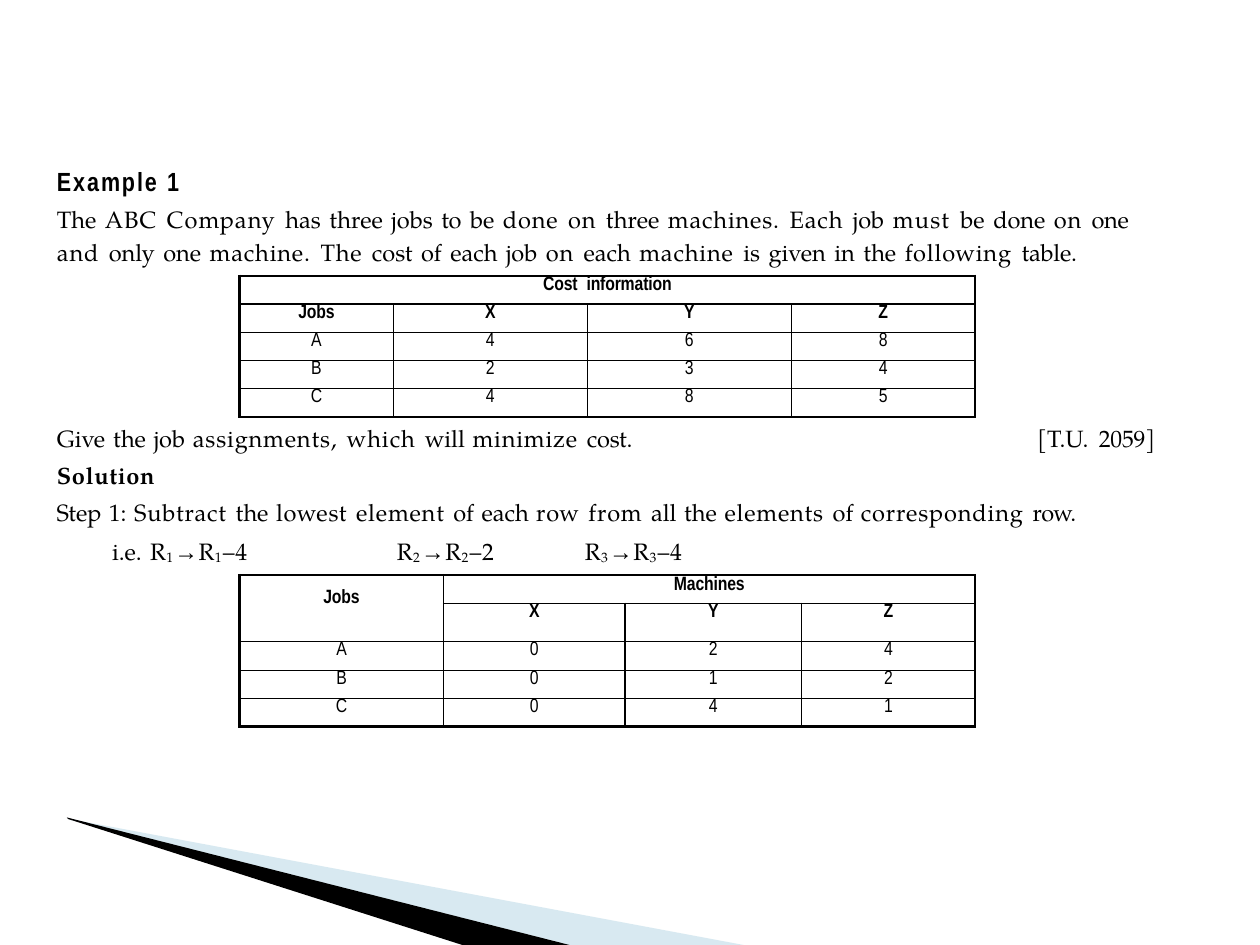
from itertools import groupby

from lxml import etree
from pptx import Presentation
from pptx import util as u
from pptx.dml.color import RGBColor
from pptx.enum import text
from pptx.oxml.ns import qn

BLACK, PALE_BLUE = "000000", "9FCADC"
SERIF, NARROW, ARROW = "TeX Gyre Pagella", "Arial Narrow", "Arial"
BODY = {"name": SERIF, "size": u.Pt(13.5), "bold": False}
TITLE = {"name": NARROW, "size": u.Pt(15), "bold": True}
CELL = {"name": NARROW, "size": u.Pt(11)}


def color(hex_string):
    return RGBColor.from_string(hex_string)


def set_all(target, values):
    for name, value in values.items():
        setattr(target, name, value)


def add_run(paragraph, content, spacing=0, style=BODY, baseline=0, gap=0):
    """Spacing is in points; gap widens the spaces between words further."""
    for is_space, letters in groupby(content, lambda letter: bool(gap) and letter == " "):
        run = paragraph.add_run()
        run.text = "".join(letters)
        set_all(run.font, style)
        run.font.color.rgb = color(BLACK)
        properties = run.font._element
        properties.set("spc", str(round((spacing + gap * is_space) * 100)))
        if baseline:
            properties.set("baseline", str(baseline * 1000))


def add_text(slide, box, top_inset, paragraphs):
    """Each paragraph is a dict: runs, and optionally gap, indent, tabs (cm) and layout."""
    shape = slide.shapes.add_textbox(*map(u.Cm, box))
    frame = shape.text_frame
    set_all(frame, {
        "word_wrap": True, "auto_size": text.MSO_AUTO_SIZE.SHAPE_TO_FIT_TEXT,
        "margin_left": 0, "margin_right": 0, "margin_bottom": 0,
        "margin_top": u.Cm(top_inset)})
    for index, item in enumerate(paragraphs):
        paragraph = frame.add_paragraph() if index else frame.paragraphs[0]
        properties = paragraph._p.get_or_add_pPr()
        properties.set("marL", str(u.Cm(item.get("indent", 0.03))))
        if "tabs" in item:
            tab_list = etree.SubElement(properties, qn("a:tabLst"))
            for position in item["tabs"]:
                etree.SubElement(tab_list, qn("a:tab"), pos=str(u.Cm(position)), algn="l")
        set_all(paragraph, item.get("layout", {}))
        for run in item["runs"]:
            add_run(paragraph, *run, gap=item.get("gap", 0))


def row_reduction_runs(row, amount, ending=""):
    style = {**BODY, "name": ARROW}
    variable = [("R", 0.4), (str(row), 0.6, BODY, -9)]
    return variable + [("→", 0.4, style)] + variable + [(f"–{amount}{ending}", 0.4)]


def set_border(cell, side, width):
    line = etree.SubElement(cell._tc.get_or_add_tcPr(), qn(f"a:ln{side}"), w=str(u.Pt(width)))
    fill = etree.SubElement(line, qn("a:solidFill"))
    etree.SubElement(fill, qn("a:srgbClr"), val=BLACK)


def add_cost_table(slide, left, top, widths, heights, rows, merges, header_rows=2):
    """Rows hold the cell texts; merges are (row, column, last row, last column)."""
    frame = slide.shapes.add_table(len(rows), len(widths), u.Cm(left), u.Cm(top),
                                   u.Cm(sum(widths)), u.Cm(sum(heights)))
    table = frame.table
    set_all(table, {"first_row": False, "horz_banding": False})
    for column, width in zip(table.columns, widths):
        column.width = u.Cm(width)
    for row, height in zip(table.rows, heights):
        row.height = u.Cm(height)
    for first_row, first_column, last_row, last_column in merges:
        table.cell(first_row, first_column).merge(table.cell(last_row, last_column))

    for r, values in enumerate(rows):
        for c, value in enumerate(values):
            cell = table.cell(r, c)
            set_all(cell, {"margin_left": 0, "margin_right": 0, "margin_bottom": 0,
                           "margin_top": u.Cm(0 if r else 0.02)})
            paragraph = cell.text_frame.paragraphs[0]
            if cell.is_spanned:
                end = etree.SubElement(paragraph._p, qn("a:endParaRPr"))
                end.set("sz", "1100")
                continue
            if cell.is_merge_origin and cell.span_height > 1:
                cell.margin_top = u.Cm(0.3)
            paragraph.alignment = text.PP_ALIGN.CENTER
            heading = r < header_rows
            add_run(paragraph, value, -0.1 if heading else 0, {**CELL, "bold": heading},
                    gap=2.6)
            height = cell.span_height if cell.is_merge_origin else 1
            width = cell.span_width if cell.is_merge_origin else 1
            outer = {"L": c == 0, "R": c + width == len(widths),
                     "T": r == 0, "B": r + height == len(rows)}
            for side, is_outer in outer.items():
                set_border(cell, side, 1.5 if is_outer else 0.75)
            cell.fill.background()


def add_wedge(slide, left, top, points, hex_string, opacity=100):
    """Points are relative to left and top, in cm."""
    corners = [(u.Cm(left + x), u.Cm(top + y)) for x, y in points]
    builder = slide.shapes.build_freeform(*corners[0])
    builder.add_line_segments(corners[1:], close=True)
    shape = builder.convert_to_shape()
    shape.shadow.inherit = False
    shape.fill.solid()
    shape.fill.fore_color.rgb = color(hex_string)
    shape.line.fill.background()
    if opacity < 100:
        fill = shape._element.spPr.find(qn("a:solidFill"))
        etree.SubElement(fill[0], qn("a:alpha"), val=str(opacity * 1000))


def add_corner_decoration(slide, left, top):
    add_wedge(slide, left, top,
              [(0.05, 0.03), (0.05, 0.05), (0.28, 0.08), (10.13, 2.57), (13.64, 2.57)],
              PALE_BLUE, 40)
    add_wedge(slide, left, top, [(0, 0), (0.02, 0.03), (7.97, 2.57), (10.13, 2.57)], BLACK)


def add_problem(slide):
    add_text(slide, (1.12, 3.12, 22.3, 2.29), 0.21, [
        {"runs": [("Example ", 1.1, TITLE), ("1", 0, TITLE)]},
        {"gap": 1.5, "layout": {"line_spacing": 1.15, "space_before": u.Pt(2.4)}, "runs": [
            ("The ",), ("ABC Company ", 0.6), ("has three jobs to be ",), ("done on ", 0.5),
            ("three ",), ("machines. Each ", 0.5), ("job ",), ("must ", 0.8), ("be done ",),
            ("on ", 0.5), ("one ", -0.2), ("and ", 0.5), ("only one ",),
            ("machine. The ", 0.5), ("cost of each job ",), ("on ", 0.5), ("each ",),
            ("machine ", 0.5), ("is given in the ",), ("following ", 0.5),
            ("table.", -0.1)]}])
    add_cost_table(slide, 4.83, 5.56, [3.1, 3.91, 4.11, 3.71], [0.57] * 5,
                   [["Cost information", "", "", ""], ["Jobs", *"XYZ"],
                    "A468", "B234", "C485"], [(0, 0, 0, 3)])


def add_solution(slide):
    add_text(slide, (1.12, 8.33, 11.89, 1.57), 0.22, [
        {"gap": 1.05, "runs": [
            ("Give the job ",), ("assignments, ", 0.5), ("which ", 0.6), ("will ",),
            ("minimize ", 0.5), ("cost.", -0.1)]},
        {"layout": {"space_before": u.Pt(5)},
         "runs": [("Solution", 0.4, {**BODY, "bold": True})]}])
    add_text(slide, (20.88, 8.51, 2.54, 0.66), 0.03,
             [{"gap": 2.6, "runs": [("[T.U. ",), ("2059]", -0.1)]}])
    add_text(slide, (1.04, 9.8, 21.11, 1.65), 0.24, [
        {"indent": 0.1, "gap": 0.9, "runs": [
            ("Step 1: ",), ("Subtract ", 0.5), ("the ",), ("lowest element ", 0.5),
            ("of each ",), ("row from ", 0.5), ("all the ",), ("elements ", 0.5),
            ("of ",), ("corresponding ", 0.5), ("row.", -0.2)]},
        {"indent": 1.22, "gap": 1.3, "tabs": [5.74, 9.53],
         "layout": {"space_before": u.Pt(6)},
         "runs": [("i.e. ",), *row_reduction_runs(1, 4, "\t"),
                  *row_reduction_runs(2, 2, "\t"), *row_reduction_runs(3, 4)]}])
    add_cost_table(slide, 4.83, 11.59, [4.11, 3.66, 3.56, 3.5],
                   [0.57, 0.78, 0.57, 0.57, 0.57],
                   [["Jobs", "Machines", "", ""], ["", *"XYZ"],
                    "A024", "B012", "C041"], [(0, 0, 1, 0), (0, 1, 0, 3)])


def main():
    presentation = Presentation()
    set_all(presentation, {"slide_width": u.Cm(25.4), "slide_height": u.Cm(19.05)})
    slide = presentation.slides.add_slide(presentation.slide_layouts[6])
    add_corner_decoration(slide, 1.35, 16.48)
    add_problem(slide)
    add_solution(slide)
    presentation.save("out.pptx")


if __name__ == "__main__":
    main()
